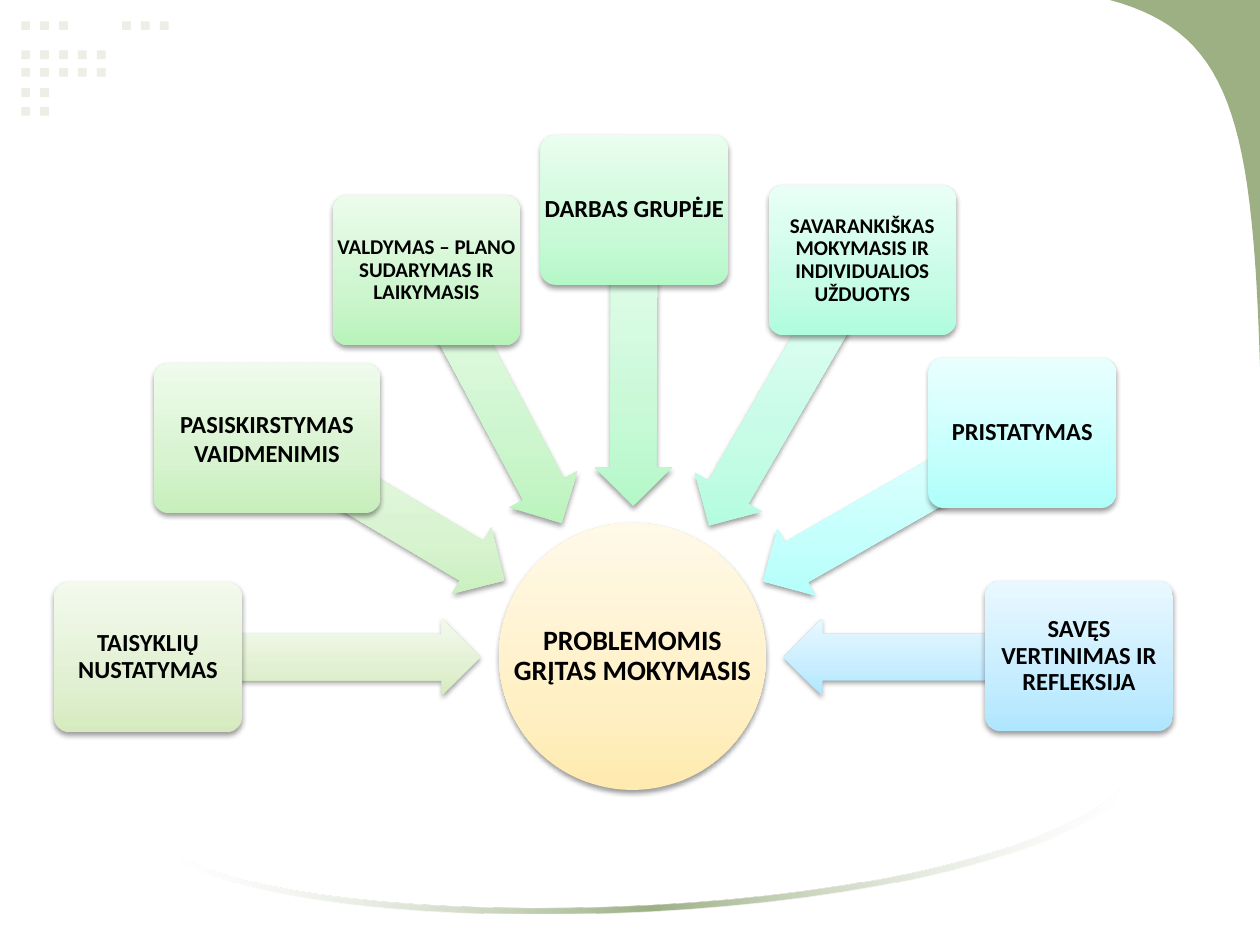
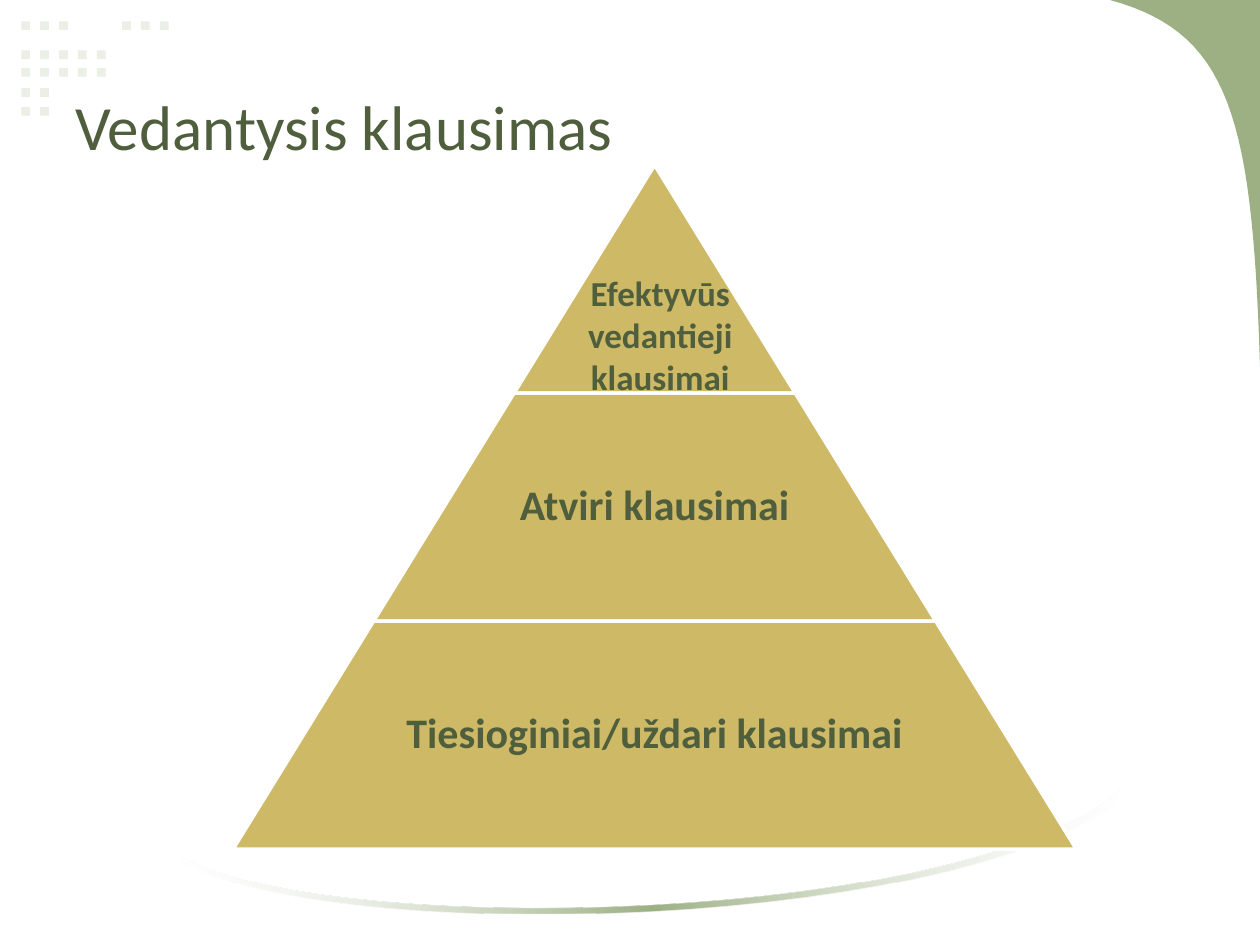
from lxml import etree
from pptx import Presentation
from pptx.dml.color import RGBColor
from pptx.enum.shapes import MSO_SHAPE
from pptx.enum.text import MSO_ANCHOR, PP_ALIGN
from pptx.oxml.ns import qn
from pptx.util import Pt

FONT = "Calibri"
BLACK = RGBColor(0x00, 0x00, 0x00)
WHITE = RGBColor(0xFF, 0xFF, 0xFF)
PALE = RGBColor(0xEB, 0xEF, 0xE6)
GREEN = RGBColor(0x9C, 0xB0, 0x84)
DARK_GREEN = RGBColor(0x4F, 0x5E, 0x3C)
GOLD = RGBColor(0xCE, 0xB9, 0x66)

# Dark, middle and light tone of each gradient, from bottom to top
CREAM = [RGBColor(0xFF, 0xEB, 0xAF), RGBColor(0xFF, 0xF0, 0xC6), RGBColor(0xFF, 0xF9, 0xE9)]
LIME = [RGBColor(0xD5, 0xEB, 0xBF), RGBColor(0xE1, 0xF0, 0xD2), RGBColor(0xF3, 0xFA, 0xED)]
LEAF = [RGBColor(0xC6, 0xEF, 0xBB), RGBColor(0xD7, 0xF3, 0xCF), RGBColor(0xEF, 0xFB, 0xEC)]
SPRING = [RGBColor(0xB8, 0xF3, 0xBA), RGBColor(0xCD, 0xF6, 0xCE), RGBColor(0xEB, 0xFC, 0xEB)]
MINT = [RGBColor(0xB4, 0xF8, 0xC8), RGBColor(0xCA, 0xF9, 0xD8), RGBColor(0xEA, 0xFE, 0xEF)]
AQUA = [RGBColor(0xB0, 0xFC, 0xDE), RGBColor(0xC7, 0xFC, 0xE7), RGBColor(0xE9, 0xFF, 0xF6)]
CYAN = [RGBColor(0xAE, 0xFF, 0xFA), RGBColor(0xC5, 0xFF, 0xFC), RGBColor(0xE9, 0xFF, 0xFE)]
SKY = [RGBColor(0xAE, 0xE6, 0xFF), RGBColor(0xC6, 0xED, 0xFF), RGBColor(0xE9, 0xF8, 0xFF)]


def fill_gradient(s, stops, angle):
    """Fill s with (position %, colour, opacity %) stops, unaffected by its rotation."""
    s.fill.gradient()
    s.fill.gradient_angle = angle
    grad = s._element.spPr.find(qn("a:gradFill"))
    grad.set("rotWithShape", "0")
    stop_list = grad.find(qn("a:gsLst"))
    for old in list(stop_list):
        stop_list.remove(old)
    for position, colour, opacity in stops:
        gs = etree.SubElement(stop_list, qn("a:gs"), pos=str(position * 1000))
        clr = etree.SubElement(gs, qn("a:srgbClr"), val=str(colour))
        if opacity < 100:
            etree.SubElement(clr, qn("a:alpha"), val=str(opacity * 1000))


def add_label(slide, box, lines, size, colour, bold=True, align=PP_ALIGN.CENTER,
              spacing=0.9, inset=(2, 2)):
    tf = slide.shapes.add_textbox(*[Pt(v) for v in box]).text_frame
    tf.word_wrap = True
    tf.vertical_anchor = MSO_ANCHOR.MIDDLE
    tf.margin_left = tf.margin_right = Pt(inset[0])
    tf.margin_top = tf.margin_bottom = Pt(inset[1])
    for i, line in enumerate(lines):
        p = tf.add_paragraph() if i else tf.paragraphs[0]
        p.alignment = align
        p.line_spacing = spacing
        r = p.add_run()
        r.text = line
        r.font.name = FONT
        r.font.size = Pt(size)
        r.font.bold = bold
        r.font.color.rgb = colour


prs = Presentation()
prs.slide_width, prs.slide_height = Pt(720), Pt(540)
blank = prs.slide_layouts[6]
wheel, pyramid = [prs.slides.add_slide(blank) for _ in range(2)]

# Shared decoration: dotted corner, green corner, swoosh
DOT, PITCH, DOT_LEFT = 5, 10.8, 12.2
DOT_ROWS = [(12.2, 3), (28.8, 5), (38.9, 5), (50.4, 2), (61.2, 2)]
dots = [(DOT_LEFT + i * PITCH, y) for y, count in DOT_ROWS for i in range(count)]
dots += [(69.8 + i * PITCH, 12.2) for i in range(3)]

# Outlines: Bezier curves, then straight corners
CORNER = ([[(634.3, 0), (702.7, 18.7), (715.7, 67), (720, 209.5)]], [(720, 0)])
SWOOSH = ([[(642.2, 455), (554.4, 530.6), (187.9, 541.4), (102.2, 491)],
           [(102.2, 488.9), (187.2, 536.4), (555.1, 528.5), (642.2, 450)]], [])
STEPS = 30

for slide in (wheel, pyramid):
    for x, y in dots:
        s = slide.shapes.add_shape(MSO_SHAPE.RECTANGLE, Pt(x), Pt(y), Pt(DOT), Pt(DOT))
        s.shadow.inherit = False
        s.fill.solid()
        s.fill.fore_color.rgb = PALE
        s.line.fill.background()
    for curves, corners in (CORNER, SWOOSH):
        points = []
        for curve in curves:
            for t in [i / STEPS for i in range(STEPS + 1)]:
                weights = [(1 - t) ** 3, 3 * t * (1 - t) ** 2, 3 * t * t * (1 - t), t ** 3]
                points.append([sum(w * c for w, c in zip(weights, axis))
                               for axis in zip(*curve)])
        points = [(Pt(x), Pt(y)) for x, y in points + corners]
        builder = slide.shapes.build_freeform(*points[0])
        builder.add_line_segments(points[1:], close=True)
        s = builder.convert_to_shape()
        s.shadow.inherit = False
        s.line.fill.background()
        if corners:
            s.fill.solid()
            s.fill.fore_color.rgb = GREEN
        else:
            fill_gradient(s, [(0, WHITE, 30), (50, GREEN, 100), (100, WHITE, 30)], 0)

# Slide 1: seven steps pointing at the centre
BOX_W, BOX_H, ARROW_H = 107.2, 85.8, 44
CENTRE = (285.1, 298.8, 152.6, 152.6)
# text, size, tones, box left/top/width, arrow left/top/width, arrow rotation
STEPS_AROUND = [
    ("TAISYKLIŲ NUSTATYMAS", 14, LIME, (31, 332.6, BOX_W), (85, 353.5, 189.4), 180),
    ("PASISKIRSTYMAS VAIDMENIMIS", 14, LEAF, (87.8, 207.4, 129.6), (141.8, 269.3, 157.7), 210.8),
    ("VALDYMAS – PLANO SUDARYMAS IR LAIKYMASIS", 12, SPRING,
     (190.1, 111.6, BOX_W), (200.2, 204.5, 164.2), 241.9),
    ("DARBAS GRUPĖJE", 14, MINT, (308.9, 77, BOX_W), (277.9, 182.9, 168.5), 270.2),
    ("SAVARANKIŠKAS MOKYMASIS IR INDIVIDUALIOS UŽDUOTYS", 12, AQUA,
     (439.2, 105.8, BOX_W), (361.4, 202.3, 175.7), 300.1),
    ("PRISTATYMAS", 14, CYAN, (530.6, 204.5, BOX_W), (424.8, 267.8, 170.6), 330.2),
    ("SAVĘS VERTINIMAS IR REFLEKSIJA", 14, SKY, (563, 332, BOX_W), (447.8, 353.5, 168.5), 0),
]

# preset, frame, adjustments, rotation, tones, text, size
parts = [(MSO_SHAPE.OVAL, CENTRE, [], 0, CREAM, "PROBLEMOMIS GRĮTAS MOKYMASIS", 16)]
for text, size, tones, box, arrow, angle in STEPS_AROUND:
    parts.append((MSO_SHAPE.LEFT_ARROW, (*arrow, ARROW_H), [0.6, 0.5], angle, tones, "", 0))
    parts.append((MSO_SHAPE.ROUNDED_RECTANGLE, (*box, BOX_H), [0.1], 0, tones, text, size))

for preset, frame, adjustments, angle, tones, text, size in parts:
    s = wheel.shapes.add_shape(preset, *[Pt(v) for v in frame])
    for i, value in enumerate(adjustments):
        s.adjustments[i] = value
    s.rotation = angle
    s.line.fill.background()
    fill_gradient(s, [(pos, tone, 100) for pos, tone in zip((0, 35, 100), tones)], 90)
    # Soft shadow below the shape
    s.shadow.inherit = False
    effects = s._element.spPr.find(qn("a:effectLst"))
    shadow = etree.SubElement(effects, qn("a:outerShdw"), blurRad=str(Pt(3.1)),
                              dist=str(Pt(1.6)), dir="5400000", rotWithShape="0")
    clr = etree.SubElement(shadow, qn("a:srgbClr"), val=str(BLACK))
    etree.SubElement(clr, qn("a:alpha"), val="38000")
    if text:
        spacing = 1 if text.startswith("PASISKIRSTYMAS") else 0.9
        inset = (1, 1) if preset == MSO_SHAPE.OVAL else (2, 2)
        add_label(wheel, frame, [text], size, BLACK, spacing=spacing, inset=inset)

# Slide 2: title
add_label(pyramid, (36, 26.6, 648, 90), ["Vedantysis klausimas"], 36, DARK_GREEN,
          bold=False, align=PP_ALIGN.LEFT, spacing=1, inset=(7.2, 3.6))

# Slide 2: pyramid, each level wider by the same amount
MIDDLE, APEX, LEVEL_W, LEVEL_H = 374.1, 94.3, 160.6, 130.3
for i, text in enumerate(["", "Atviri klausimai", "Tiesioginiai/uždari klausimai"]):
    w, top = LEVEL_W * (i + 1), APEX + LEVEL_H * i
    s = pyramid.shapes.add_shape(MSO_SHAPE.TRAPEZOID, Pt(MIDDLE - w / 2), Pt(top),
                                 Pt(w), Pt(LEVEL_H))
    s.adjustments[0] = LEVEL_W / 2 / LEVEL_H
    s.shadow.inherit = False
    s.fill.solid()
    s.fill.fore_color.rgb = GOLD
    s.line.color.rgb = WHITE
    s.line.width = Pt(2)
    if text:
        text_w = 0.65 * w
        add_label(pyramid, (MIDDLE - text_w / 2, top, text_w, LEVEL_H), [text], 24, DARK_GREEN)

# Text of the top level
add_label(pyramid, (286.6, 151.2, 181.4, 79.9), ["Efektyvūs", "vedantieji", "klausimai"],
          20, DARK_GREEN, spacing=1, inset=(7.2, 3.6))

prs.save("out.pptx")
